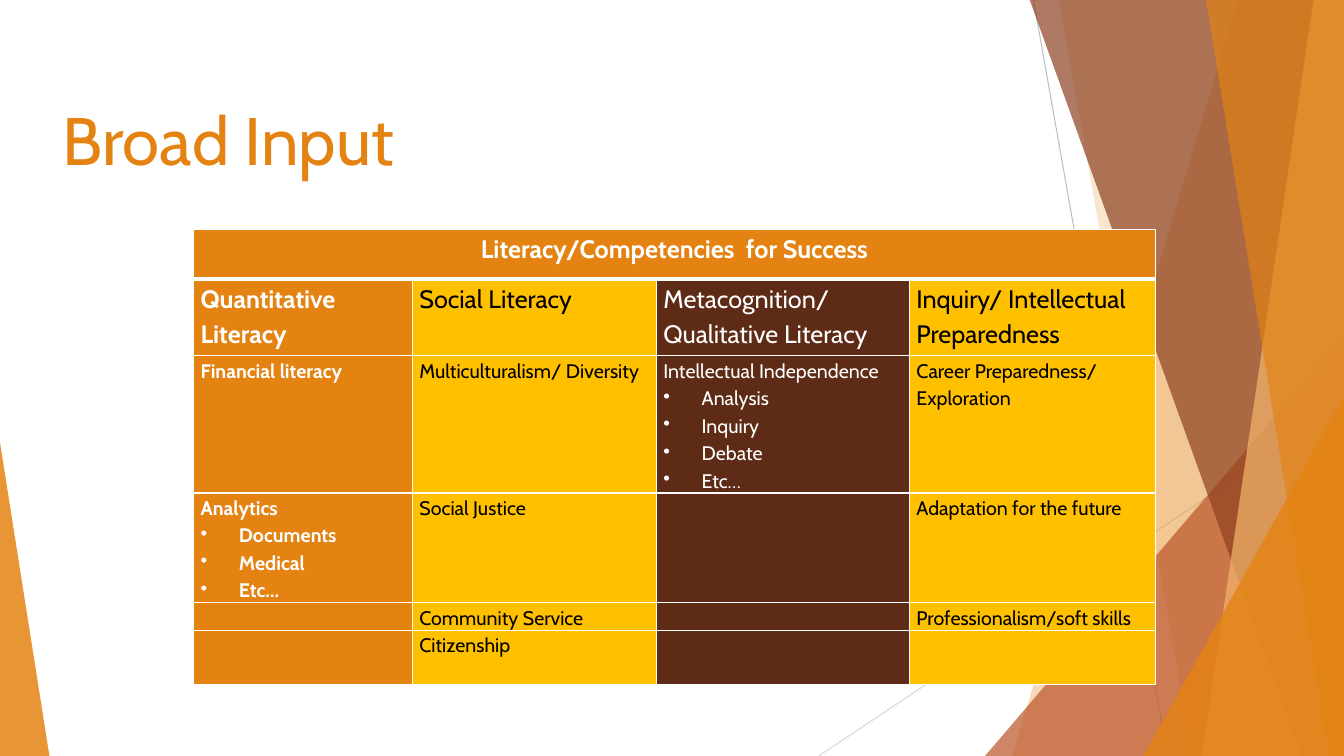
from lxml import etree
from pptx import Presentation
from pptx.dml.color import RGBColor
from pptx.enum.shapes import MSO_CONNECTOR, MSO_SHAPE
from pptx.enum.text import MSO_ANCHOR, MSO_AUTO_SIZE, PP_ALIGN
from pptx.oxml.ns import qn
from pptx.util import Pt

PX = 9144  # EMU per px, 100 px to the inch

THEME = {
    "font": "Cabin",
    "orange": "E48312", "gold": "FFC000", "brown": "5E2C16",
    "rust": "BD582C", "sienna": "8E4221", "peach": "F3B56C",
    "white": "FFFFFF", "black": "000000",
    "grey": "BFBFBF", "pale grey": "D9D9D9",
    "title": 48, "heading": 18, "entry": 14, "empty": 10,
}


def paint(shape, color, opacity):
    shape.shadow.inherit = False
    shape.line.fill.background()
    shape.fill.solid()
    shape.fill.fore_color.rgb = RGBColor.from_string(THEME[color])
    srgb = shape.fill._xPr.find(qn("a:solidFill"))[0]
    etree.SubElement(srgb, qn("a:alpha"), val=str(opacity * 1000))


def add_run(paragraph, text, size, color, bold=False):
    run = paragraph.add_run()
    run.text = text
    run.font.name = THEME["font"]
    run.font.size = Pt(THEME[size])
    run.font.bold = bold
    run.font.color.rgb = RGBColor.from_string(THEME[color])


presentation = Presentation()
presentation.slide_width = 1333 * PX
presentation.slide_height = 750 * PX
slide = presentation.slides.add_slide(presentation.slide_layouts[5])
shapes = slide.shapes

# Thin lines behind the facets
for x1, y1, x2, y2, color in [
    (1025, 0, 1158, 750, "grey"),
    (1333, 403, 812, 750, "pale grey"),
]:
    ray = shapes.add_connector(
        MSO_CONNECTOR.STRAIGHT, x1 * PX, y1 * PX, x2 * PX, y2 * PX)
    ray.line.color.rgb = RGBColor.from_string(THEME[color])
    ray.line.width = Pt(0.75)
    etree.SubElement(ray._element.spPr, qn("a:effectLst"))

# Facets, back to front: a band is (top x, bottom x) up to the right edge,
# a triangle is (left, top, width, height, apex)
for place, color, opacity in [
    ((1228, 1004), "orange", 30),
    ((1050, 1183), "orange", 20),
    ((977, 333, 356, 417, 1), "rust", 72),
    ((1021, 1291), "sienna", 70),
    ((1303, 1192), "peach", 70),
    ((1196, 1318), "orange", 65),
    ((1134, 393, 199, 357, 1), "orange", 80),
    ((0, 439, 49, 311, 0), "orange", 85),
]:
    if len(place) == 2:
        top_x, bottom_x = place
        outline = shapes.build_freeform(top_x, -1, scale=PX)
        outline.add_line_segments([(1333, -1), (1333, 750), (bottom_x, 750)])
        facet = outline.convert_to_shape()
    else:
        facet = shapes.add_shape(
            MSO_SHAPE.ISOSCELES_TRIANGLE, *(n * PX for n in place[:4]))
        facet.adjustments[0] = place[4]
    paint(facet, color, opacity)

# Title
title = shapes.title
title.left, title.top, title.width, title.height = (
    n * PX for n in (52, 93, 1206, 69))
title.text_frame.auto_size = MSO_AUTO_SIZE.NONE
title.text_frame.vertical_anchor = MSO_ANCHOR.TOP
heading = title.text_frame.paragraphs[0]
heading.alignment = PP_ALIGN.LEFT
add_run(heading, "Broad Input", "title", "orange")

# Competency table: the first line of a cell is plain, the rest are bullets
competencies = [
    [["Literacy/Competencies  for Success"], [], [], []],
    [["Quantitative Literacy"], ["Social Literacy"],
     ["Metacognition/ Qualitative Literacy"],
     ["Inquiry/ Intellectual Preparedness"]],
    [["Financial literacy"], ["Multiculturalism/ Diversity"],
     ["Intellectual Independence", "Analysis", "Inquiry", "Debate", "Etc…"],
     ["Career Preparedness/ Exploration"]],
    [["Analytics", "Documents", "Medical", "Etc…"], ["Social Justice"],
     [], ["Adaptation for the future"]],
    [[], ["Community Service"], [], ["Professionalism/soft skills"]],
    [[], ["Citizenship"], [], []],
]
column_widths = [217, 242, 251, 244]
row_heights = [49, 76, 136, 108, 27, 54]
column_colors = [("orange", "white"), ("gold", "black"),
                 ("brown", "white"), ("gold", "black")]

table = shapes.add_table(
    len(row_heights), len(column_widths), 192 * PX, 228 * PX,
    sum(column_widths) * PX, sum(row_heights) * PX).table
table.first_row = table.horz_banding = False
for column, width in zip(table.columns, column_widths):
    column.width = width * PX
for row, height in zip(table.rows, row_heights):
    row.height = height * PX
table.cell(0, 0).merge(table.cell(0, 3))

for r, row in enumerate(competencies):
    for c, lines in enumerate(row):
        cell = table.cell(r, c)
        fill, ink = column_colors[c] if r else ("orange", "white")
        cell.margin_left = cell.margin_right = 7 * PX
        cell.margin_top = cell.margin_bottom = 0

        # White borders, heavier under the header
        for side in ("lnL", "lnR", "lnT", "lnB"):
            heavy = (r, side) in [(0, "lnB"), (1, "lnT")]
            border = etree.SubElement(
                cell._tc.get_or_add_tcPr(), qn(f"a:{side}"),
                w=str(Pt(3 if heavy else 1)))
            solid = etree.SubElement(border, qn("a:solidFill"))
            etree.SubElement(solid, qn("a:srgbClr"), val=THEME["white"])
        cell.fill.solid()
        cell.fill.fore_color.rgb = RGBColor.from_string(THEME[fill])

        # Text
        frame = cell.text_frame
        if not lines:
            etree.SubElement(frame.paragraphs[0]._p, qn("a:endParaRPr"),
                             sz=str(THEME["empty"] * 100))
        for i, line in enumerate(lines):
            paragraph = frame.add_paragraph() if i else frame.paragraphs[0]
            paragraph.line_spacing = 1.15
            paragraph.alignment = PP_ALIGN.LEFT if r else PP_ALIGN.CENTER
            if i:
                properties = paragraph._p.get_or_add_pPr()
                properties.set("marL", str(38 * PX))
                properties.set("indent", str(-38 * PX))
                etree.SubElement(properties, qn("a:buChar"), char="•")
            add_run(paragraph, line, "heading" if r < 2 else "entry",
                    ink, bold=c == 0)

presentation.save("out.pptx")
